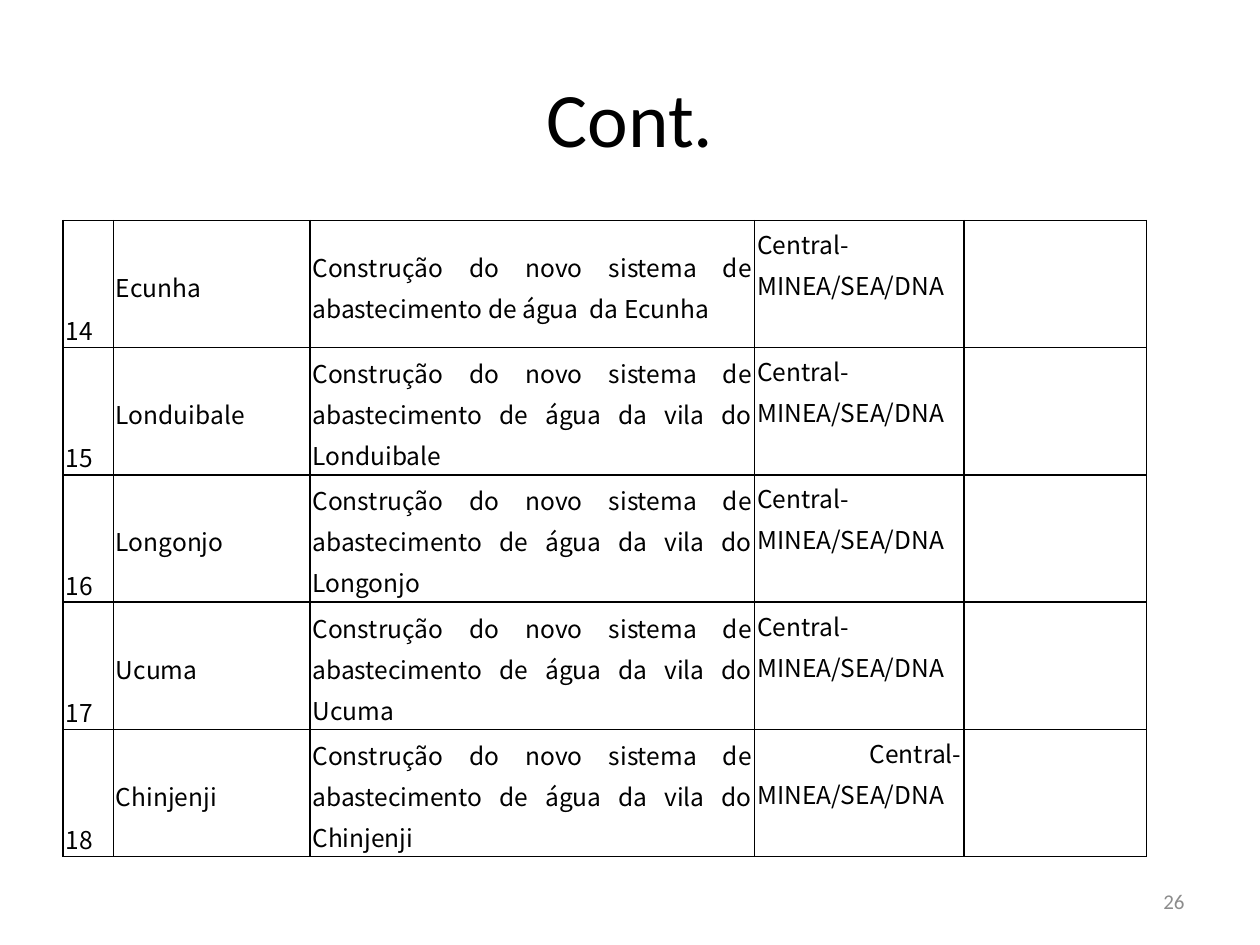
from lxml.etree import SubElement
from pptx import Presentation
from pptx.dml.color import RGBColor
from pptx.enum.text import MSO_ANCHOR as ANCHOR, PP_ALIGN as ALIGN
from pptx.oxml.ns import qn
from pptx.util import Inches, Pt

COLORS = {"text": "000000", "border": "000000", "cell": "FFFFFF", "number": "8C8C8C"}
TITLE_FONT = "Calibri"
TABLE_FONT = "Noto Sans CJK KR"

COLUMN_WIDTHS = [0.4, 1.56, 3.53, 1.66, 1.45]
COLUMN_ANCHORS = [ANCHOR.BOTTOM, ANCHOR.MIDDLE, ANCHOR.MIDDLE, ANCHOR.TOP, ANCHOR.TOP]
ROW_HEIGHT = 1.01
FIRST_NUMBER = 14
WORK = "Construção do novo sistema de abastecimento de água "
AGENCY = "Central- MINEA/SEA/DNA"
# Town, ending of the work description, agency
PROJECTS = [
    ("Ecunha", " da Ecunha", AGENCY),
    ("Londuibale", "da vila do Londuibale", AGENCY),
    ("Longonjo", "da vila do Longonjo", AGENCY),
    ("Ucuma", "da vila do Ucuma", AGENCY),
    ("Chinjenji", "da vila do Chinjenji", " " + AGENCY),
]


def rgb(name):
    return RGBColor.from_string(COLORS[name])


def write_text(text_frame, text, font, size, color, **paragraph_format):
    paragraph = text_frame.paragraphs[0]
    for attribute, value in paragraph_format.items():
        setattr(paragraph, attribute, value)
    run = paragraph.add_run()
    run.text = text
    run.font.name = font
    run.font.size = Pt(size)
    run.font.color.rgb = rgb(color)


def place(shape, left, top, width, height):
    shape.left, shape.top = Inches(left), Inches(top)
    shape.width, shape.height = Inches(width), Inches(height)


def add_borders(cell):
    """Draw all four cell borders; they must precede the fill in the XML."""
    properties = cell._tc.get_or_add_tcPr()
    for side in ("a:lnL", "a:lnR", "a:lnT", "a:lnB"):
        line = SubElement(properties, qn(side), w=str(Pt(1)))
        fill = SubElement(line, qn("a:solidFill"))
        SubElement(fill, qn("a:srgbClr"), val=COLORS["border"])


def format_cell(cell, text, column):
    cell_format = {
        "margin_left": Inches(0.02),
        "margin_right": Inches(0.02),
        "margin_top": 0,
        "margin_bottom": 0,
        "vertical_anchor": COLUMN_ANCHORS[column],
    }
    for attribute, value in cell_format.items():
        setattr(cell, attribute, value)
    add_borders(cell)
    cell.fill.solid()
    cell.fill.fore_color.rgb = rgb("cell")
    if text:
        write_text(cell.text_frame, text, TABLE_FONT, 14, "text",
                   alignment=ALIGN.JUSTIFY, line_spacing=1.15,
                   space_after=Pt(10 if column == 3 else 0))


def add_title(slide, text):
    title = slide.shapes.title
    place(title, 0.5, 0.3, 9, 1.25)
    title.text_frame.vertical_anchor = ANCHOR.MIDDLE
    write_text(title.text_frame, text, TITLE_FONT, 44, "text", alignment=ALIGN.CENTER)


def add_project_table(slide):
    frame = slide.shapes.add_table(
        len(PROJECTS), len(COLUMN_WIDTHS), Inches(0.5), Inches(1.75),
        Inches(sum(COLUMN_WIDTHS)), Inches(ROW_HEIGHT * len(PROJECTS)))
    table = frame.table
    table.first_row = table.horz_banding = False
    for column, width in zip(table.columns, COLUMN_WIDTHS):
        column.width = Inches(width)
    for row, (town, ending, agency) in enumerate(PROJECTS):
        table.rows[row].height = Inches(ROW_HEIGHT)
        values = [str(FIRST_NUMBER + row), town, WORK + ending, agency, ""]
        for column, text in enumerate(values):
            format_cell(table.cell(row, column), text, column)


def add_page_number(slide, number):
    box = slide.shapes.add_textbox(Inches(7.17), Inches(6.95), Inches(2.33), Inches(0.4))
    box.text_frame.word_wrap = True
    box.text_frame.vertical_anchor = ANCHOR.MIDDLE
    write_text(box.text_frame, str(number), TITLE_FONT, 12, "number", alignment=ALIGN.RIGHT)


def main():
    presentation = Presentation()
    presentation.slide_width, presentation.slide_height = Inches(10), Inches(7.5)
    slide = presentation.slides.add_slide(presentation.slide_layouts[5])
    add_title(slide, "Cont.")
    add_project_table(slide)
    add_page_number(slide, 26)
    presentation.save("out.pptx")


if __name__ == "__main__":
    main()
